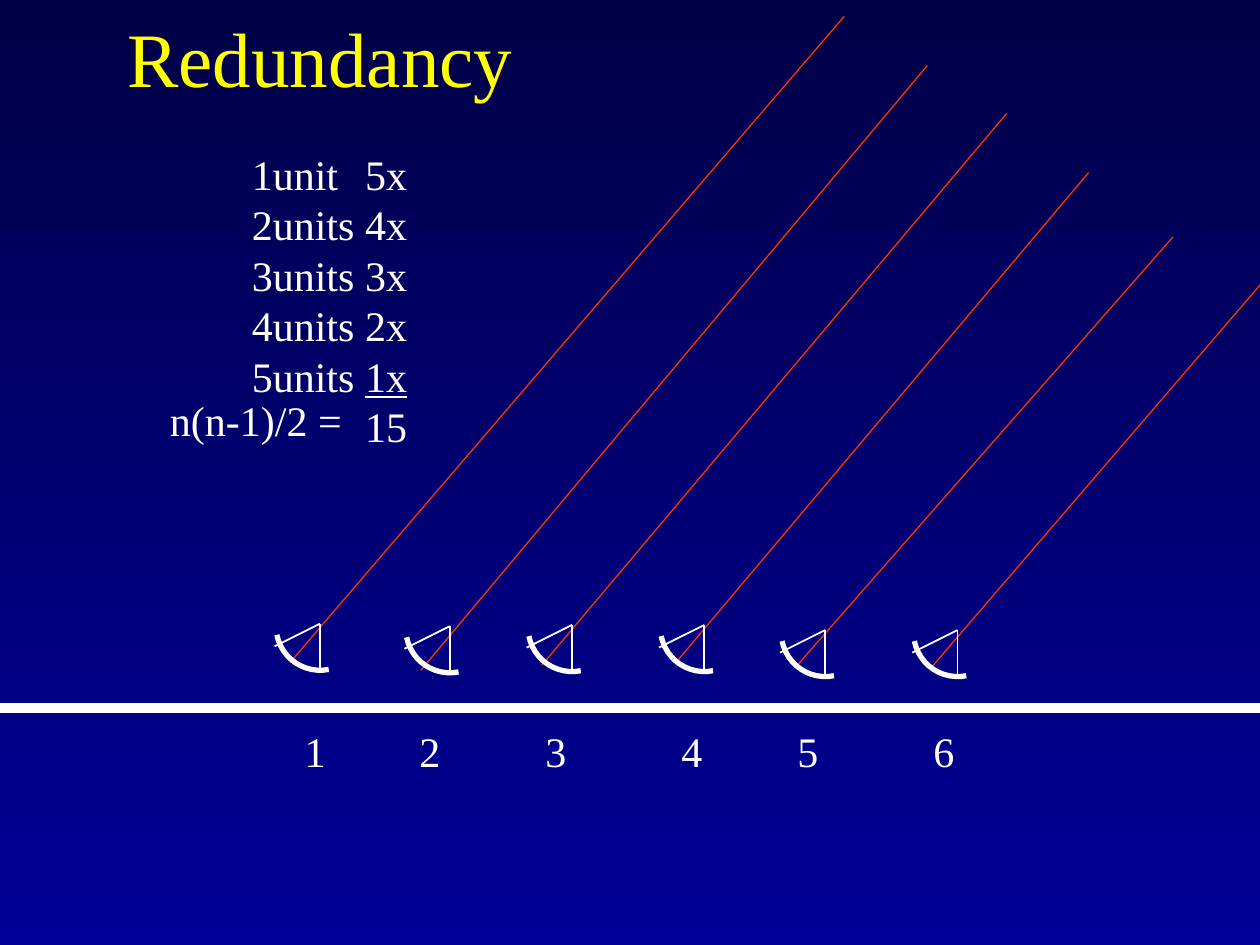
from lxml import etree
from pptx import Presentation
from pptx.dml.color import RGBColor
from pptx.enum.shapes import MSO_CONNECTOR, MSO_SHAPE
from pptx.enum.text import MSO_ANCHOR, MSO_AUTO_SIZE, PP_ALIGN
from pptx.oxml.ns import qn
from pptx.util import Inches, Pt

STRAIGHT = MSO_CONNECTOR.STRAIGHT
ARC = MSO_SHAPE.ARC
BOTTOM = MSO_ANCHOR.BOTTOM
NO_FIT = MSO_AUTO_SIZE.NONE
LEFT, RIGHT = PP_ALIGN.LEFT, PP_ALIGN.RIGHT

NIGHT = RGBColor(0x00, 0x00, 0x47)
BLUE = RGBColor(0x00, 0x00, 0x99)
WHITE = RGBColor(0xFF, 0xFF, 0xFF)
YELLOW = RGBColor(0xFF, 0xFF, 0x00)
RED = RGBColor(0xFF, 0x33, 0x00)
FONT = "Times New Roman"

# Focus of each dish, then the start and end of the ray that reaches it
ANTENNAS = [
    ((2.54, 4.95), (2.30, 5.26), (6.70, 0.13)),
    ((3.57, 4.97), (3.34, 5.32), (7.36, 0.52)),
    ((4.54, 4.96), (4.30, 5.28), (7.99, 0.90)),
    ((5.59, 4.96), (5.38, 5.24), (8.64, 1.37)),
    ((6.55, 5.00), (6.31, 5.30), (9.31, 1.88)),
    ((7.60, 5.00), (7.39, 5.30), (10.02, 2.24)),
]
BASELINES = ["1unit\t5x", "2units\t4x", "3units\t3x", "4units\t2x"]


def add_line(page, start, end, color, width):
    line = page.shapes.add_connector(STRAIGHT, *map(Inches, start + end))
    line.line.color.rgb = color
    line.line.width = Pt(width)
    etree.SubElement(line._element.spPr, qn("a:effectLst"))


def write(para, text, size=24, color=WHITE, underline=None, align=LEFT):
    para.alignment = align
    span = para.add_run()
    span.text = text
    font = span.font
    font.name, font.size, font.underline = FONT, Pt(size), underline
    font.color.rgb = color


def set_tabs(para, stops):
    tab_list = etree.SubElement(para._p.get_or_add_pPr(), qn("a:tabLst"))
    for stop in stops:
        etree.SubElement(tab_list, qn("a:tab"), pos=str(Inches(stop)), algn="l")


def add_text(page, box, lines, tabs=()):
    frame = page.shapes.add_textbox(*map(Inches, box)).text_frame
    frame.word_wrap = False
    for index, text in enumerate(lines):
        para = frame.add_paragraph() if index else frame.paragraphs[0]
        para.line_spacing = Pt(28.8)
        write(para, text)
        if tabs:
            set_tabs(para, tabs)
    return frame


def set_background(page):
    fill = page.background.fill
    fill.gradient()
    fill.gradient_angle = 270
    for stop, color, position in zip(fill.gradient_stops, (NIGHT, BLUE), (0, 1)):
        stop.color.rgb = color
        stop.position = position


def add_title(page, box, text):
    title = page.shapes.title
    title.left, title.top, title.width, title.height = map(Inches, box)
    frame = title.text_frame
    frame.vertical_anchor = BOTTOM
    frame.auto_size = NO_FIT
    write(frame.paragraphs[0], text, size=44, color=YELLOW, align=RIGHT)


def add_dish(page, focus, radius=0.35):
    x, y = focus
    # Reflector: a quarter circle turned to face the sky
    dish = page.shapes.add_shape(
        ARC, Inches(x - radius), Inches(y + 0.02 - radius),
        Inches(2 * radius), Inches(2 * radius))
    dish.rotation = 168.7
    dish.shadow.inherit = False
    dish.fill.background()
    dish.line.color.rgb = WHITE
    dish.line.width = Pt(3)
    # Struts that hold the receiver
    add_line(page, focus, (x - 0.36, y + 0.18), WHITE, 1)
    add_line(page, focus, (x, y + 0.35), WHITE, 1)


def add_array(page):
    add_line(page, (0, 5.62), (10, 5.62), WHITE, 6)
    for _, start, end in ANTENNAS:
        add_line(page, start, end, RED, 0.75)
    for focus, _, _ in ANTENNAS:
        add_dish(page, focus)
    add_text(page, (2.32, 5.71, 5.37, 0.5), ["1\t2\t3\t4\t5\t6"],
             tabs=(0.91, 1.91, 2.99, 3.91, 4.99))


def add_count(page):
    frame = add_text(page, (1.9, 1.13, 1.45, 2.5),
                     BASELINES + ["5units\t", "\t15"], tabs=(0.9,))
    write(frame.paragraphs[len(BASELINES)], "1x", underline=True)
    add_text(page, (1.25, 3.08, 1.65, 0.5), ["n(n-1)/2 ="])


def main():
    deck = Presentation()
    deck.slide_width, deck.slide_height = Inches(10), Inches(7.5)
    page = deck.slides.add_slide(deck.slide_layouts[5])
    set_background(page)
    add_array(page)
    add_count(page)
    add_title(page, (-4.33, -0.42, 8.5, 1.29), "Redundancy")
    deck.save("out.pptx")


if __name__ == "__main__":
    main()
